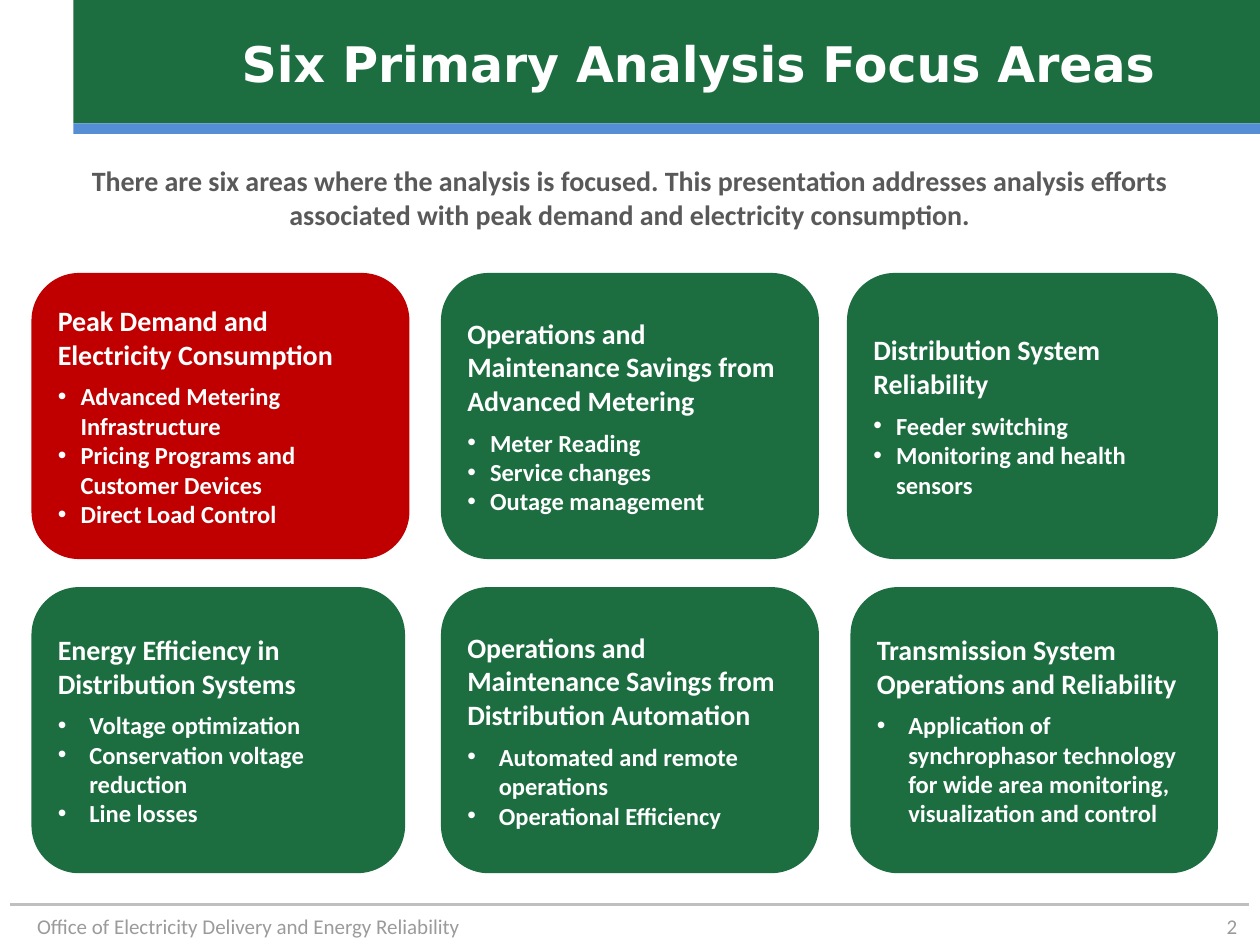
from lxml import etree
from pptx import Presentation
from pptx.dml.color import RGBColor
from pptx.enum.shapes import MSO_CONNECTOR, MSO_SHAPE
from pptx.enum.text import MSO_ANCHOR as Anchor, MSO_AUTO_SIZE, PP_ALIGN as Align
from pptx.oxml.ns import qn
from pptx.util import Pt

GREEN = RGBColor(0x1C, 0x6E, 0x41)
RED = RGBColor(0xC0, 0x00, 0x00)
BLUE = RGBColor(0x55, 0x8E, 0xD5)
WHITE = RGBColor(0xFF, 0xFF, 0xFF)
DARK_GRAY = RGBColor(0x59, 0x59, 0x59)
MID_GRAY = RGBColor(0x9B, 0x9B, 0x9B)
LIGHT_GRAY = RGBColor(0xBF, 0xBF, 0xBF)

SLIDE_W, SLIDE_H = 720, 540
ROW_TOPS, CARD_H = (156, 335.5), 163.5
ROW_INDENTS = (13, 18)
ROWS = [
    [
        (18, 216, RED, "Peak Demand and Electricity Consumption",
         ["Advanced Metering Infrastructure",
          "Pricing Programs and Customer Devices",
          "Direct Load Control"]),
        (252, 216, GREEN, "Operations and Maintenance Savings from Advanced Metering",
         ["Meter Reading", "Service changes", "Outage management"]),
        (484, 212, GREEN, "Distribution System Reliability",
         ["Feeder switching", "Monitoring and health sensors"]),
    ],
    [
        (18, 213.5, GREEN, "Energy Efficiency in Distribution Systems",
         ["Voltage optimization", "Conservation voltage reduction", "Line losses"]),
        (252, 216, GREEN, "Operations and Maintenance Savings from Distribution Automation",
         ["Automated and remote operations", "Operational Efficiency"]),
        (486, 210, GREEN, "Transmission System Operations and Reliability",
         ["Application of synchrophasor technology for wide area monitoring, "
          "visualization and control"]),
    ],
]


def format_paragraph(p, size, color, bold=False, align=Align.LEFT, name="Calibri"):
    p.alignment = align
    for r in p.runs:
        r.font.name = name
        r.font.size = Pt(size)
        r.font.bold = bold
        r.font.color.rgb = color


def add_bullet(p, indent):
    pPr = p._p.get_or_add_pPr()
    pPr.set("marL", str(Pt(indent)))
    pPr.set("indent", str(-Pt(indent)))
    etree.SubElement(pPr, qn("a:buFont")).set("typeface", "Arial")
    etree.SubElement(pPr, qn("a:buChar")).set("char", "•")


def add_block(s, kind, box, fill):
    sp = s.shapes.add_shape(kind, *map(Pt, box))
    sp.shadow.inherit = False
    sp.fill.solid()
    sp.fill.fore_color.rgb = fill
    sp.line.fill.background()
    return sp


def add_text(s, box, text, size, color, bold=False, align=Align.LEFT, anchor=Anchor.TOP):
    tf = s.shapes.add_textbox(*map(Pt, box)).text_frame
    tf.word_wrap = True
    tf.vertical_anchor = anchor
    tf.text = text
    format_paragraph(tf.paragraphs[0], size, color, bold, align)


def add_header(s, box, title):
    x, y, w, h = box
    stripe_h = 6
    add_block(s, MSO_SHAPE.RECTANGLE, (x, y, w, h - stripe_h), GREEN)
    add_block(s, MSO_SHAPE.RECTANGLE, (x, y + h - stripe_h, w, stripe_h), BLUE)
    sp = s.shapes.title
    sp.left, sp.top, sp.width, sp.height = Pt(x + 36), Pt(y), Pt(w - 36), Pt(72)
    tf = sp.text_frame
    tf.text = title
    tf.word_wrap = True
    tf.auto_size = MSO_AUTO_SIZE.NONE
    tf.vertical_anchor = Anchor.MIDDLE
    format_paragraph(tf.paragraphs[0], 28, WHITE, True, Align.CENTER, "DejaVu Sans")
    s.shapes._spTree.append(sp._element)


def add_card(s, box, fill, heading, items, indent):
    tf = add_block(s, MSO_SHAPE.ROUNDED_RECTANGLE, box, fill).text_frame
    tf.word_wrap = True
    tf.vertical_anchor = Anchor.MIDDLE
    tf.margin_left = tf.margin_right = tf.margin_top = tf.margin_bottom = Pt(7.2)
    tf.text = heading
    p = tf.paragraphs[0]
    p.space_after = Pt(6)
    format_paragraph(p, 16, WHITE, True)
    for item in items:
        p = tf.add_paragraph()
        p.text = item
        add_bullet(p, indent)
        format_paragraph(p, 14, WHITE, True)


def add_footer(s, box, text, number):
    x, y, w, h = box
    line = s.shapes.add_connector(MSO_CONNECTOR.STRAIGHT, Pt(x), Pt(y), Pt(x + w), Pt(y))
    line.line.color.rgb = LIGHT_GRAY
    line.line.width = Pt(1.75)
    etree.SubElement(line._element.spPr, qn("a:effectLst"))
    add_text(s, (0, y + 1.5, 270, h), text, 12, MID_GRAY, align=Align.RIGHT)
    add_text(s, (x + w - 168, y + 1.5, 168, h), number, 12, MID_GRAY,
             align=Align.RIGHT, anchor=Anchor.MIDDLE)


def main():
    prs = Presentation()
    prs.slide_width, prs.slide_height = Pt(SLIDE_W), Pt(SLIDE_H)
    s = prs.slides.add_slide(prs.slide_layouts[5])
    add_header(s, (42, 0, SLIDE_W - 42, 76.5), "Six Primary Analysis Focus Areas")
    add_text(s, (36, 90, 648, 48),
             "There are six areas where the analysis is focused. This presentation "
             "addresses analysis efforts associated with peak demand and electricity "
             "consumption.", 16, DARK_GRAY, True, Align.CENTER)
    for top, indent, row in zip(ROW_TOPS, ROW_INDENTS, ROWS):
        for left, width, fill, heading, items in row:
            add_card(s, (left, top, width, CARD_H), fill, heading, items, indent)
    add_footer(s, (6, 517, 708, 21.5),
               "Office of Electricity Delivery and Energy Reliability", "2")
    prs.save("out.pptx")


if __name__ == "__main__":
    main()
